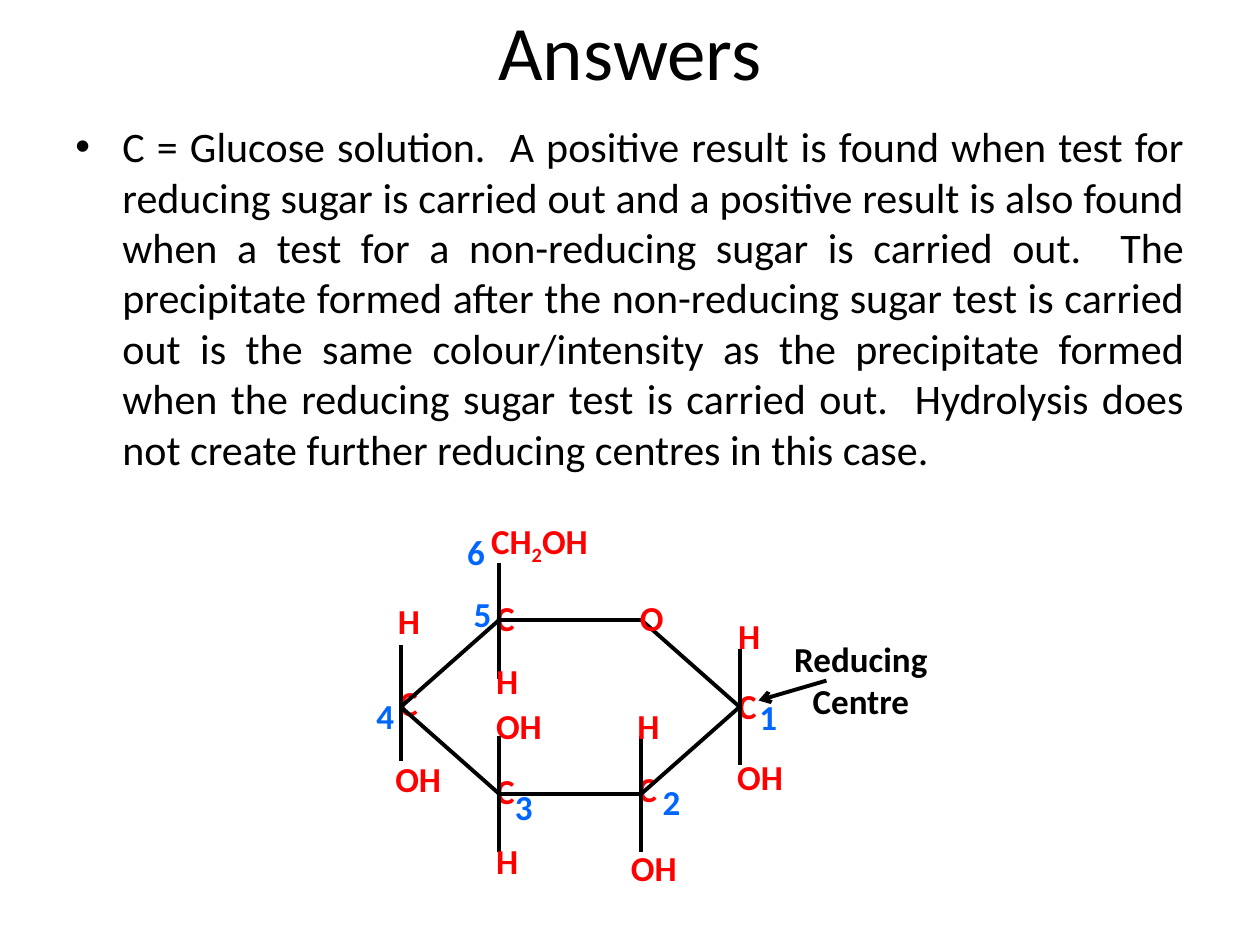
from itertools import pairwise
from typing import NamedTuple

from lxml.etree import SubElement
from pptx import Presentation
from pptx.dml.color import RGBColor
from pptx.enum.shapes import MSO_CONNECTOR
from pptx.enum.text import MSO_ANCHOR, PP_ALIGN
from pptx.oxml.ns import qn
from pptx.util import Cm, Pt

COLORS = {"text": "000000", "atom": "FF0000", "number": "0066FF", "bond": "000000"}
FONT = "Calibri"
ANSWER = (
    "C = Glucose solution.  A positive result is found when test for reducing sugar "
    "is carried out and a positive result is also found when a test for a "
    "non-reducing sugar is carried out.  The precipitate formed after the "
    "non-reducing sugar test is carried out is the same colour/intensity as the "
    "precipitate formed when the reducing sugar test is carried out.  Hydrolysis "
    "does not create further reducing centres in this case."
)


class Label(NamedTuple):
    text: str
    x: float
    y: float
    color: str = "atom"
    width: float = 0.91
    height: float = 1.12


class Line(NamedTuple):
    x1: float
    y1: float
    x2: float
    y2: float
    arrow: bool = False


CARBONS = [
    Label("C", x, y)
    for x, y in [(14.63, 13.67), (12.62, 15.34), (7.8, 13.61), (9.75, 11.91), (9.75, 15.39)]
]
HYDROXYLS = [
    Label("OH", x, y, width=1.83)
    for x, y in [(7.72, 15.14), (12.47, 16.94), (14.61, 15.11), (9.75, 14.07)]
]
HYDROGENS = [
    Label("H", x, y, width=1.07)
    for x, y in [(7.77, 11.96), (9.75, 13.18), (9.75, 16.79), (12.6, 14.07), (14.63, 12.27)]
]
NUMBERS = [
    Label(str(i), x, y, "number")
    for i, (x, y) in enumerate(
        [(15.06, 13.89), (13.11, 15.6), (10.13, 15.72),
         (7.34, 13.87), (9.3, 11.81), (9.17, 10.57)], 1)
]
OXYGEN = Label("O", 12.65, 11.91, width=0.61)
CAPTION = Label("Reducing Centre", 14.88, 12.73, "text", 4.95, 1.96)

RING = [(8.08, 14.25), (10.06, 12.5), (12.93, 12.5),
        (14.91, 14.25), (12.93, 16), (10.06, 16)]
BOND_LENGTH = 2.34
BOND_TOPS = [(10.06, 11.35), (8.08, 13), (10.06, 14.83), (12.93, 14.83), (14.91, 13.08)]
ARROW = Line(16.66, 13.72, 15.29, 14.12, arrow=True)


def add_run(p, text: str, size: float, color: str, bold: bool = False):
    r = p.add_run()
    r.text = text
    for name, value in {"name": FONT, "size": Pt(size), "bold": bold}.items():
        setattr(r.font, name, value)
    r.font.color.rgb = RGBColor.from_string(COLORS[color])
    return r


def add_box(s, x: float, y: float, width: float, height: float):
    tf = s.shapes.add_textbox(Cm(x), Cm(y), Cm(width), Cm(height)).text_frame
    tf.word_wrap = True
    return tf


def add_label(s, label: Label):
    p = add_box(s, label.x, label.y, label.width, label.height).paragraphs[0]
    add_run(p, label.text, 20, label.color, bold=True)
    return p


def add_line(s, line: Line) -> None:
    c = s.shapes.add_connector(
        MSO_CONNECTOR.STRAIGHT, Cm(line.x1), Cm(line.y1), Cm(line.x2), Cm(line.y2))
    c.line.width = Pt(2.25)
    c.line.color.rgb = RGBColor.from_string(COLORS["bond"])
    if line.arrow:
        SubElement(c.line._get_or_add_ln(), qn("a:tailEnd"), type="arrow")
    SubElement(c._element.spPr, qn("a:effectLst"))


def add_title(s, text: str) -> None:
    title = s.shapes.title
    place = {"left": 1.27, "top": -0.58, "width": 22.86, "height": 3.18}
    for name, value in place.items():
        setattr(title, name, Cm(value))
    tf = title.text_frame
    tf.vertical_anchor = MSO_ANCHOR.MIDDLE
    p = tf.paragraphs[0]
    p.alignment = PP_ALIGN.CENTER
    add_run(p, text, 44, "text")


def add_answer(s, text: str) -> None:
    p = add_box(s, 1.27, 2.31, 22.86, 12.57).paragraphs[0]
    p.alignment = PP_ALIGN.JUSTIFY
    p.space_before = Pt(4.8)
    pPr = p._p.get_or_add_pPr()
    pPr.set("marL", str(Cm(0.95)))
    pPr.set("indent", str(Cm(-0.95)))
    SubElement(pPr, qn("a:buFont"), typeface="Arial")
    SubElement(pPr, qn("a:buChar"), char="•")
    add_run(p, text, 24, "text")


def add_glucose(s) -> None:
    for label in CARBONS:
        add_label(s, label)
    p = add_label(s, Label("CH", 9.65, 10.34, width=3.12))
    subscript = add_run(p, "2", 20, "atom", bold=True)
    subscript.font._element.set("baseline", "-25000")
    add_run(p, "OH", 20, "atom", bold=True)

    for start, end in pairwise(RING + RING[:1]):
        add_line(s, Line(*start, *end))
    for x, top in BOND_TOPS:
        add_line(s, Line(x, top, x, top + BOND_LENGTH))

    for label in [*HYDROXYLS, *HYDROGENS, OXYGEN, *NUMBERS]:
        add_label(s, label)
    add_label(s, CAPTION).alignment = PP_ALIGN.CENTER
    add_line(s, ARROW)


def main() -> None:
    prs = Presentation()
    prs.slide_width, prs.slide_height = Cm(25.4), Cm(19.05)
    s = prs.slides.add_slide(prs.slide_layouts[5])
    add_title(s, "Answers")
    add_answer(s, ANSWER)
    add_glucose(s)
    prs.save("out.pptx")


if __name__ == "__main__":
    main()
